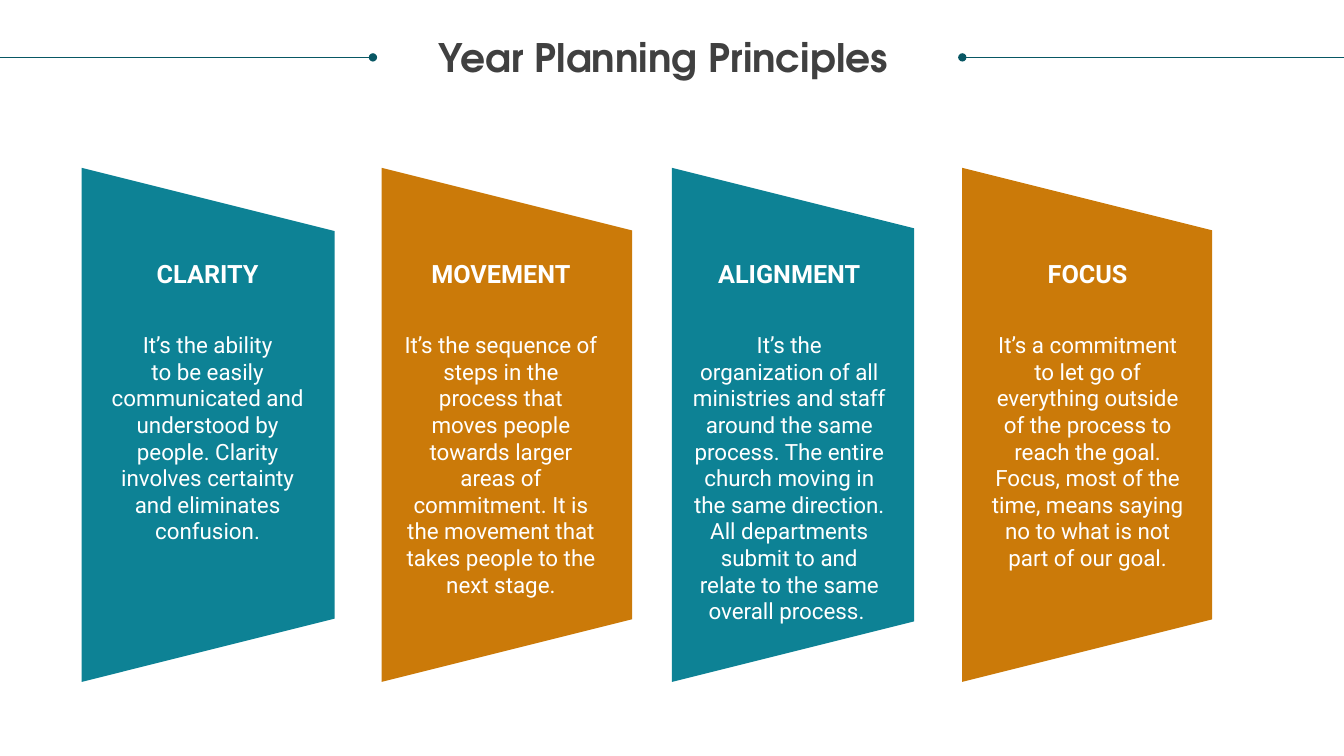
from dataclasses import dataclass

from lxml.etree import SubElement
from pptx import Presentation
from pptx.dml.color import RGBColor
from pptx.enum.shapes import MSO_CONNECTOR, MSO_SHAPE
from pptx.enum.text import MSO_ANCHOR, MSO_AUTO_SIZE, PP_ALIGN
from pptx.oxml.ns import qn
from pptx.util import Pt


@dataclass(frozen=True)
class Theme:
    teal: str = "0D8295"
    orange: str = "CB7A09"
    rule: str = "085764"
    title: str = "404040"
    white: str = "FFFFFF"
    title_font: str = "TeX Gyre Adventor"
    body_font: str = "Roboto"
    title_size: float = 28
    heading_size: float = 18
    body_size: float = 16
    body_leading: float = 19


THEME = Theme()
SLIDE_WIDTH, SLIDE_HEIGHT = 960, 540
RULE_TOP = 41
PANEL_MIDDLE, PANEL_HEIGHT = 303.5, 367.2
HEADING_TOP, HEADING_WIDTH = 184.3, 108
BODY_TOP, BODY_WIDTH = 236.9, 138.2

PRINCIPLES = [
    ("CLARITY", "It’s the ability\nto be easily communicated and understood by people. "
     "Clarity involves certainty and eliminates confusion.", 58.3, 180.8, 148.3),
    ("MOVEMENT", "It’s the sequence of steps in the process that moves people towards "
     "larger areas of commitment. It is the movement that takes people to the next stage.",
     272.6, 179, 357.8),
    ("ALIGNMENT", "It’s the organization of all ministries and staff around the same "
     "process. The entire church moving in the same direction. All departments submit to "
     "and relate to the same overall process. ", 480, 173, 563.8),
    ("FOCUS", "It’s a commitment to let go of everything outside of the process to reach "
     "the goal. Focus, most of the time, means saying no to what is not part of our goal.",
     687.2, 178.6, 776.9),
]


def write_text(shape, text, *, size, color, font, bold=False, spacing=None):
    frame = shape.text_frame
    frame.word_wrap = True
    frame.auto_size = MSO_AUTO_SIZE.NONE
    frame.vertical_anchor = MSO_ANCHOR.TOP
    frame.margin_left = frame.margin_right = frame.margin_top = frame.margin_bottom = 0
    paragraph = frame.paragraphs[0]
    paragraph.text = text
    paragraph.alignment = PP_ALIGN.CENTER
    paragraph.space_before = Pt(0)
    if spacing is not None:
        paragraph.line_spacing = spacing
    for run in paragraph.runs:
        run.font.name = font
        run.font.size = Pt(size)
        run.font.bold = bold
        run.font.color.rgb = RGBColor.from_string(color)


class SlideBuilder:
    def __init__(self, slide, theme):
        self.slide = slide
        self.theme = theme

    def title(self, text, left, top, width, height):
        shape = self.slide.shapes.title
        shape.left, shape.top, shape.width, shape.height = map(Pt, (left, top, width, height))
        write_text(shape, text, size=self.theme.title_size, color=self.theme.title,
                   font=self.theme.title_font, bold=True, spacing=0.9)

    def rule(self, start, end, dot_end):
        connector = self.slide.shapes.add_connector(
            MSO_CONNECTOR.STRAIGHT, Pt(start), Pt(RULE_TOP), Pt(end), Pt(RULE_TOP))
        connector.line.color.rgb = RGBColor.from_string(self.theme.rule)
        connector.line.width = Pt(0.5)
        properties = connector._element.spPr
        SubElement(properties.find(qn("a:ln")), qn(dot_end), type="oval")
        SubElement(properties, qn("a:effectLst"))

    def panel(self, left, width, color):
        shape = self.slide.shapes.add_shape(
            MSO_SHAPE.TRAPEZOID, Pt(left + (width - PANEL_HEIGHT) / 2),
            Pt(PANEL_MIDDLE - width / 2), Pt(PANEL_HEIGHT), Pt(width))
        shape.rotation = 90
        shape.shadow.inherit = False
        shape.fill.solid()
        shape.fill.fore_color.rgb = RGBColor.from_string(color)
        shape.line.fill.background()

    def text(self, text, center, top, width, height, **text_format):
        shape = self.slide.shapes.add_textbox(
            Pt(center - width / 2), Pt(top), Pt(width), Pt(height))
        write_text(shape, text, color=self.theme.white, font=self.theme.body_font, **text_format)


def main():
    presentation = Presentation()
    presentation.slide_width, presentation.slide_height = Pt(SLIDE_WIDTH), Pt(SLIDE_HEIGHT)
    slide = presentation.slides.add_slide(presentation.slide_layouts[5])
    builder = SlideBuilder(slide, THEME)

    builder.title("Year Planning Principles", 272.9, 27.4, 401.8, 60)
    builder.rule(0, 266.4, "a:tailEnd")
    builder.rule(687.4, SLIDE_WIDTH, "a:headEnd")

    for index, (heading, body, left, width, center) in enumerate(PRINCIPLES):
        builder.panel(left, width, (THEME.teal, THEME.orange)[index % 2])
        builder.text(heading, center, HEADING_TOP, HEADING_WIDTH, 21.6,
                     size=THEME.heading_size, bold=True)
        builder.text(body, center, BODY_TOP, BODY_WIDTH, 210,
                     size=THEME.body_size, spacing=Pt(THEME.body_leading))

    presentation.save("out.pptx")


if __name__ == "__main__":
    main()
